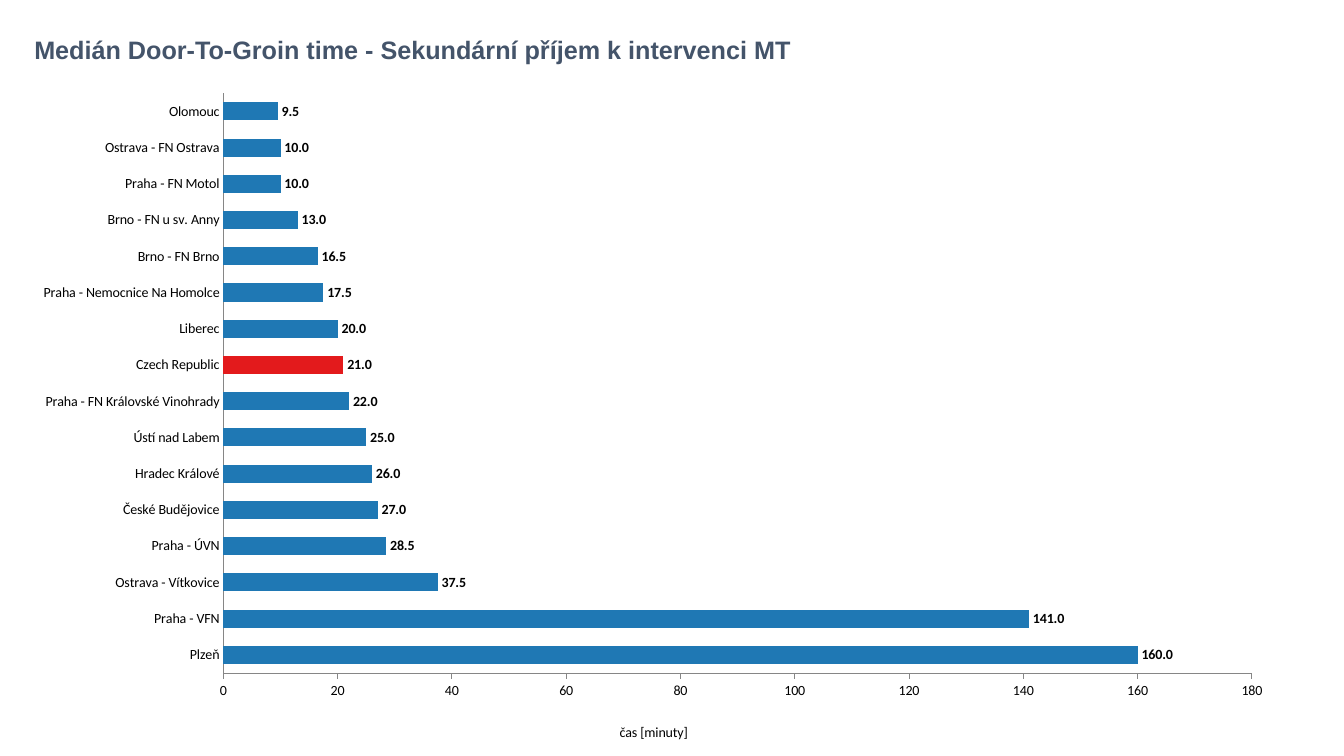
from lxml import etree
from pptx import Presentation
from pptx.chart.data import CategoryChartData
from pptx.dml.color import RGBColor
from pptx.enum.chart import XL_CHART_TYPE, XL_LABEL_POSITION, XL_TICK_MARK
from pptx.enum.text import MSO_ANCHOR, PP_ALIGN
from pptx.oxml.ns import qn
from pptx.util import Cm, Pt

BAR_CLUSTERED = XL_CHART_TYPE.BAR_CLUSTERED
OUTSIDE_END = XL_LABEL_POSITION.OUTSIDE_END
TICK_NONE, TICK_OUTSIDE = XL_TICK_MARK.NONE, XL_TICK_MARK.OUTSIDE
MIDDLE, LEFT = MSO_ANCHOR.MIDDLE, PP_ALIGN.LEFT

TITLE_ONLY = 5
BLUE, RED, SLATE, GREY, BLACK = "1F78B4", "E31A1C", "44546A", "868686", "000000"
HIGHLIGHT = "Czech Republic"
DOOR_TO_GROIN = [
    ("Plzeň", 160),
    ("Praha - VFN", 141),
    ("Ostrava - Vítkovice", 37.5),
    ("Praha - ÚVN", 28.5),
    ("České Budějovice", 27),
    ("Hradec Králové", 26),
    ("Ústí nad Labem", 25),
    ("Praha - FN Královské Vinohrady", 22),
    (HIGHLIGHT, 21),
    ("Liberec", 20),
    ("Praha - Nemocnice Na Homolce", 17.5),
    ("Brno - FN Brno", 16.5),
    ("Brno - FN u sv. Anny", 13),
    ("Praha - FN Motol", 10),
    ("Ostrava - FN Ostrava", 10),
    ("Olomouc", 9.5),
]


def color(value):
    return RGBColor.from_string(value)


def style_font(font, name, size, value, bold=False):
    font.name = name
    font.size = Pt(size)
    font.bold = bold
    font.color.rgb = color(value)


def set_layout(parent, index, **settings):
    for old_layout in parent.findall(qn("c:layout")):
        parent.remove(old_layout)
    layout = etree.Element(qn("c:layout"))
    manual = etree.SubElement(layout, qn("c:manualLayout"))
    for tag, value in settings.items():
        etree.SubElement(manual, qn(f"c:{tag}")).set("val", str(value))
    parent.insert(index, layout)


def add_title(slide, text):
    title = slide.shapes.title
    title.left, title.top, title.width, title.height = Cm(0.61), Cm(0.38), Cm(27.79), Cm(1.83)
    frame = title.text_frame
    frame.text = text
    frame.vertical_anchor = MIDDLE
    paragraph = frame.paragraphs[0]
    paragraph.alignment = LEFT
    paragraph.line_spacing = 0.9
    style_font(paragraph.font, "Arial", 18, SLATE, bold=True)


def style_axis(axis, tick_mark):
    axis.has_major_gridlines = False
    axis.major_tick_mark = tick_mark
    axis.minor_tick_mark = TICK_NONE
    axis.format.line.color.rgb = color(GREY)
    axis.format.line.width = Pt(0.75)
    style_font(axis.tick_labels.font, "Calibri", 10, BLACK)


def add_axis_title(axis, text):
    axis_title = axis.axis_title
    axis_title.text_frame.text = text
    style_font(axis_title.text_frame.paragraphs[0].font, "Calibri", 10, BLACK)
    set_layout(axis_title._element, 1, xMode="edge", yMode="edge", x=0.47, y=0.95)


def style_bars(plot):
    plot.gap_width = 100
    plot.vary_by_categories = False
    series = plot.series[0]
    series.invert_if_negative = False
    for index, (hospital, _) in enumerate(DOOR_TO_GROIN):
        fill = series.points[index].format.fill
        fill.solid()
        fill.fore_color.rgb = color(RED if hospital == HIGHLIGHT else BLUE)
    labels = series.data_labels
    labels.show_value = True
    labels.position = OUTSIDE_END
    labels.number_format = "0.0"
    labels.number_format_is_linked = False
    style_font(labels.font, "Calibri", 10, BLACK, bold=True)


def add_bar_chart(slide):
    data = CategoryChartData()
    data.categories = [hospital for hospital, _ in DOOR_TO_GROIN]
    data.add_series("Series 1", [minutes for _, minutes in DOOR_TO_GROIN])
    chart = slide.shapes.add_chart(
        BAR_CLUSTERED, Cm(0.51), Cm(2.01), Cm(32), Cm(16.99), data
    ).chart
    chart.has_legend = False
    chart.has_title = False
    style_font(chart.font, "Calibri", 18, BLACK)
    style_axis(chart.category_axis, TICK_NONE)
    value_axis = chart.value_axis
    style_axis(value_axis, TICK_OUTSIDE)
    value_axis.minimum_scale, value_axis.maximum_scale = 0, 180
    value_axis.major_unit = 20
    value_axis.tick_labels.number_format = "0"
    value_axis.tick_labels.number_format_is_linked = False
    add_axis_title(value_axis, "čas [minuty]")
    style_bars(chart.plots[0])
    plot_area = chart._chartSpace.find(f".//{qn('c:plotArea')}")
    set_layout(plot_area, 0, layoutTarget="inner", xMode="edge", yMode="edge",
               x=0.16, y=0.02, w=0.81, h=0.86)


def main():
    presentation = Presentation()
    presentation.slide_width = Cm(33.87)
    presentation.slide_height = Cm(19.05)
    slide = presentation.slides.add_slide(presentation.slide_layouts[TITLE_ONLY])
    add_title(slide, "Medián Door-To-Groin time - Sekundární příjem k intervenci MT")
    add_bar_chart(slide)
    presentation.save("out.pptx")


if __name__ == "__main__":
    main()
